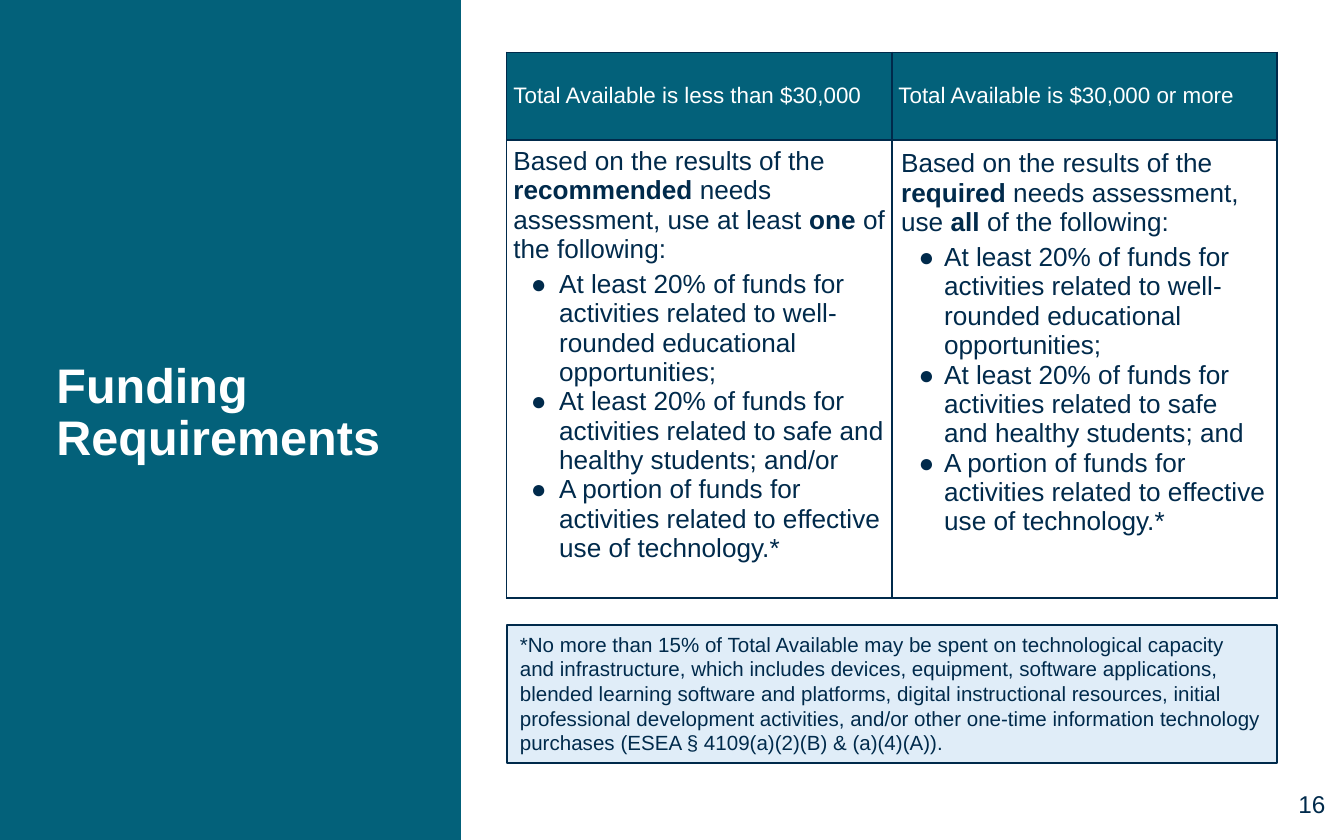
"""Build the Funding Requirements slide with its comparison table and footnote."""
from typing import NamedTuple

from lxml import etree
from pptx import Presentation
from pptx.dml.color import RGBColor
from pptx.enum import shapes, text
from pptx.oxml import ns
from pptx.util import Inches, Pt

TEAL = RGBColor(0x03, 0x61, 0x7A)
NAVY = RGBColor(0x00, 0x2A, 0x4B)
PALE_BLUE = RGBColor(0xE0, 0xED, 0xF8)
WHITE = RGBColor(0xFF, 0xFF, 0xFF)
FONT = "Arial"
LEFT, TOP, WIDTH = 3.77, 0.39, 5.73
ROW_HEIGHTS = (0.65, 3.34)


class Style(NamedTuple):
    size: float
    color: RGBColor
    bold: bool = False


class Box(NamedTuple):
    left: float
    top: float
    width: float
    height: float


class Option(NamedTuple):
    heading: str
    intro: tuple[tuple[str, bool], ...]
    bullets: tuple[str, ...]
    margin: float
    indent: float
    hanging: float


WELL_ROUNDED = "At least 20% of funds for activities related to well-rounded educational opportunities;"
HEALTHY = "At least 20% of funds for activities related to safe and healthy students; "
TECHNOLOGY = "A portion of funds for activities related to effective use of technology.*"
OPTIONS = (
    Option(
        "Total Available is less than $30,000",
        (("Based on the results of the ", False), ("recommended", True),
         (" needs assessment, use at least ", False), ("one", True), (" of the following:", False)),
        (WELL_ROUNDED, HEALTHY + "and/or", TECHNOLOGY),
        0.05, 0.34, 0.21,
    ),
    Option(
        "Total Available is $30,000 or more",
        (("Based on the results of the ", False), ("required", True),
         (" needs assessment, use ", False), ("all", True), (" of the following:", False)),
        (WELL_ROUNDED, HEALTHY + "and", TECHNOLOGY),
        0.07, 0.32, 0.19,
    ),
)
FOOTNOTE = (
    "*No more than 15% of Total Available may be spent on technological capacity and infrastructure, "
    "which includes devices, equipment, software applications, blended learning software and platforms, "
    "digital instructional resources, initial professional development activities, and/or other one-time "
    "information technology purchases (ESEA § 4109(a)(2)(B) & (a)(4)(A))."
)


def add_run(paragraph, content: str, style: Style) -> None:
    run = paragraph.add_run()
    run.text = content
    run.font.name = FONT
    run.font.size = Pt(style.size)
    run.font.bold = style.bold
    run.font.color.rgb = style.color


def set_margins(target, horizontal: float, vertical: float) -> None:
    target.margin_left = target.margin_right = Inches(horizontal)
    target.margin_top = target.margin_bottom = Inches(vertical)


def add_color(parent, color: RGBColor) -> None:
    etree.SubElement(parent, ns.qn("a:srgbClr"), val=str(color))


def add_bullet(paragraph, option: Option) -> None:
    properties = paragraph._p.get_or_add_pPr()
    properties.set("marL", str(Inches(option.indent)))
    properties.set("indent", str(-Inches(option.hanging)))
    add_color(etree.SubElement(properties, ns.qn("a:buClr")), NAVY)
    etree.SubElement(properties, ns.qn("a:buFont"), typeface=FONT)
    etree.SubElement(properties, ns.qn("a:buChar"), char="●")


def add_borders(cell) -> None:
    properties = cell._tc.get_or_add_tcPr()
    for side in ("L", "R", "T", "B"):
        line = etree.SubElement(properties, ns.qn(f"a:ln{side}"), w=str(Pt(1)))
        add_color(etree.SubElement(line, ns.qn("a:solidFill")), NAVY)


def add_rectangle(slide, box: Box, fill: RGBColor):
    shape = slide.shapes.add_shape(shapes.MSO_SHAPE.RECTANGLE, *map(Inches, box))
    shape.shadow.inherit = False
    shape.fill.solid()
    shape.fill.fore_color.rgb = fill
    shape.line.fill.background()
    return shape


def write_text(shape, content: str, style: Style, margins: tuple[float, float],
               anchor=text.MSO_ANCHOR.TOP, alignment=text.PP_ALIGN.LEFT):
    frame = shape.text_frame
    frame.word_wrap = True
    frame.vertical_anchor = anchor
    set_margins(frame, *margins)
    paragraph = frame.paragraphs[0]
    paragraph.alignment = alignment
    add_run(paragraph, content, style)
    return paragraph


def fill_option(table, column: int, option: Option) -> None:
    header, body = table.cell(0, column), table.cell(1, column)
    add_borders(header)
    header.fill.solid()
    header.fill.fore_color.rgb = TEAL
    header.vertical_anchor = text.MSO_ANCHOR.MIDDLE
    set_margins(header, 0.05, 0.05)
    add_run(header.text_frame.paragraphs[0], option.heading, Style(12, WHITE))

    add_borders(body)
    body.fill.background()
    set_margins(body, option.margin, option.margin)
    for content, bold in option.intro:
        add_run(body.text_frame.paragraphs[0], content, Style(14, NAVY, bold))
    for index, content in enumerate(option.bullets):
        paragraph = body.text_frame.add_paragraph()
        paragraph.space_before = Pt(0 if index else 3)
        add_bullet(paragraph, option)
        add_run(paragraph, content, Style(14, NAVY))


def add_options_table(slide) -> None:
    box = Box(LEFT, TOP, WIDTH, sum(ROW_HEIGHTS))
    table = slide.shapes.add_table(len(ROW_HEIGHTS), len(OPTIONS), *map(Inches, box)).table
    table.first_row = table.horz_banding = False
    for row, height in zip(table.rows, ROW_HEIGHTS):
        row.height = Inches(height)
    for column, option in enumerate(OPTIONS):
        table.columns[column].width = Inches(WIDTH / len(OPTIONS))
        fill_option(table, column, option)


def main() -> None:
    presentation = Presentation()
    presentation.slide_width, presentation.slide_height = Inches(10), Inches(6.25)
    slide = presentation.slides.add_slide(presentation.slide_layouts[6])

    add_rectangle(slide, Box(0, 0, 3.43, 6.25), TEAL)
    title = slide.shapes.add_textbox(*map(Inches, Box(0.34, TOP, 2.9, 5.38)))
    paragraph = write_text(title, "Funding Requirements", Style(26, WHITE, True),
                           (0.08, 0.04), text.MSO_ANCHOR.MIDDLE)
    paragraph.line_spacing = 0.9

    add_options_table(slide)

    footnote = add_rectangle(slide, Box(LEFT, 4.65, WIDTH, 1.03), PALE_BLUE)
    footnote.line.color.rgb = NAVY
    footnote.line.width = Pt(1)
    write_text(footnote, FOOTNOTE, Style(11, NAVY), (0.1, 0.05))

    page_number = slide.shapes.add_textbox(*map(Inches, Box(9.5, 5.77, 0.46, 0.48)))
    write_text(page_number, "16", Style(13, NAVY), (0.1, 0.1), alignment=text.PP_ALIGN.RIGHT)
    presentation.save("out.pptx")


if __name__ == "__main__":
    main()
